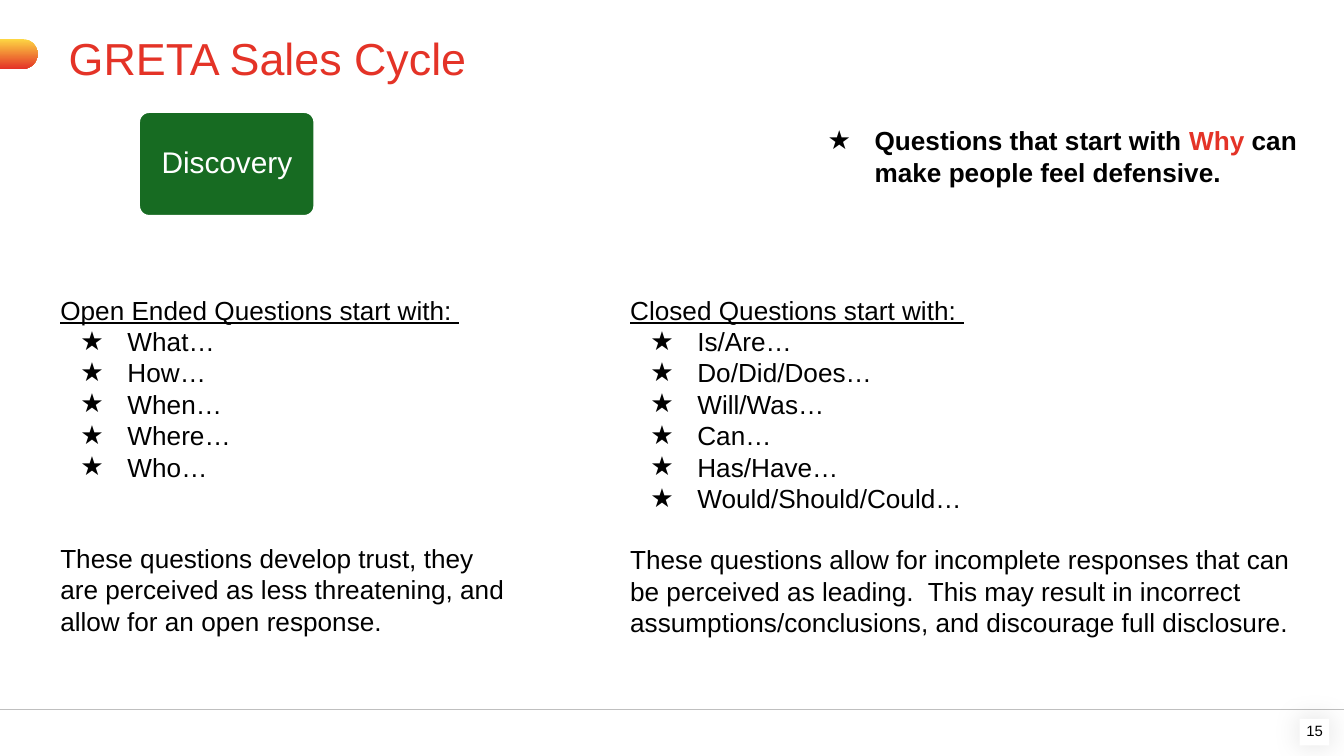
from dataclasses import dataclass

from lxml.etree import SubElement
from pptx import Presentation
from pptx.dml.color import RGBColor
from pptx.enum.shapes import MSO_CONNECTOR, MSO_SHAPE
from pptx.enum.text import MSO_ANCHOR, PP_ALIGN
from pptx.oxml.ns import qn
from pptx.util import Cm, Pt

WHITE = RGBColor(0xFF, 0xFF, 0xFF)
BLACK = RGBColor(0x00, 0x00, 0x00)
GREY = RGBColor(0xBF, 0xBF, 0xBF)
RED = RGBColor(0xE4, 0x33, 0x27)
YELLOW = RGBColor(0xFD, 0xD6, 0x43)
GREEN = RGBColor(0x17, 0x6B, 0x22)

FONT = "Arial"
BODY_SIZE = 14
LINE_PITCH = 16.1  # points per body line
PAGE_WIDTH, PAGE_HEIGHT = 25.4, 14.29
COLUMN_TOP, COLUMN_HEIGHT = 5.31, 1.3
BODY_INSET = 0.25


@dataclass
class Area:
    left: float
    top: float
    width: float
    height: float

    def lengths(self) -> tuple:
        return Cm(self.left), Cm(self.top), Cm(self.width), Cm(self.height)


@dataclass
class QuestionColumn:
    left: float
    width: float
    heading: str
    starters: list[str]
    gap_lines: int
    remark: str


COLUMNS = [
    QuestionColumn(
        0.89, 8.99, "Open Ended Questions start with: ",
        ["What…", "How…", "When…", "Where…", "Who…"], 2,
        "These questions develop trust, they are perceived as less threatening, "
        "and allow for an open response."),
    QuestionColumn(
        11.66, 13.28, "Closed Questions start with: ",
        ["Is/Are…", "Do/Did/Does…", "Will/Was…", "Can…", "Has/Have…",
         "Would/Should/Could…"], 1,
        "These questions allow for incomplete responses that can be perceived as "
        "leading.  This may result in incorrect assumptions/conclusions, and "
        "discourage full disclosure."),
]


def add_box(page, area: Area, inset_x: float, inset_y: float):
    """Add a wrapping text box and return its text frame."""
    frame = page.shapes.add_textbox(*area.lengths()).text_frame
    frame.word_wrap = True
    frame.margin_left = frame.margin_right = Cm(inset_x)
    frame.margin_top = frame.margin_bottom = Cm(inset_y)
    return frame


def add_span(para, text: str, size: float = BODY_SIZE, color: RGBColor = BLACK,
             bold: bool = False, underline: bool = False) -> None:
    span = para.add_run()
    span.text = text
    font = span.font
    font.name, font.size, font.bold, font.underline = FONT, Pt(size), bold, underline
    font.color.rgb = color


def add_star(para) -> None:
    """Give a paragraph a hanging black star bullet."""
    properties = para._p.get_or_add_pPr()
    properties.set("marL", str(Cm(1.27)))
    properties.set("indent", str(-Cm(0.89)))
    color = SubElement(properties, qn("a:buClr"))
    SubElement(color, qn("a:srgbClr"), val=str(BLACK))
    SubElement(properties, qn("a:buFont"), typeface=FONT)
    SubElement(properties, qn("a:buChar"), char="★")


def add_panel(page, kind: MSO_SHAPE, area: Area):
    """Add a preset shape without line or shadow."""
    panel = page.shapes.add_shape(kind, *area.lengths())
    panel.shadow.inherit = False
    panel.line.fill.background()
    return panel


def add_glow_shadow(panel) -> None:
    effects = panel._element.spPr.find(qn("a:effectLst"))
    shadow = SubElement(effects, qn("a:outerShdw"), blurRad=str(Pt(15)), dist="0")
    color = SubElement(shadow, qn("a:srgbClr"), val=str(BLACK))
    SubElement(color, qn("a:alpha"), val="13000")


def draw_footer(page) -> None:
    rule = page.shapes.add_connector(
        MSO_CONNECTOR.STRAIGHT, 0, Cm(13.41), Cm(PAGE_WIDTH), Cm(13.41))
    rule.line.color.rgb = GREY
    rule.line.width = Pt(1)
    SubElement(rule._element.spPr, qn("a:effectLst"))

    plate = add_panel(page, MSO_SHAPE.RECTANGLE, Area(24.56, 13.59, 0.56, 0.5))
    plate.fill.solid()
    plate.fill.fore_color.rgb = WHITE
    add_glow_shadow(plate)
    para = add_box(page, Area(24.31, 13.54, 1.07, 0.5), 0.18, 0.1).paragraphs[0]
    para.alignment = PP_ALIGN.CENTER
    add_span(para, "15", 8)


def draw_title(page) -> None:
    frame = add_box(page, Area(1.12, 0.48, 23.34, 1.22), 0.18, 0.1)
    add_span(frame.paragraphs[0], "GRETA Sales Cycle", 24, RED)

    tab = add_panel(page, MSO_SHAPE.ROUNDED_RECTANGLE, Area(-0.51, 0.74, 1.22, 0.56))
    tab.adjustments[0] = 0.5
    tab.fill.gradient()
    tab.fill.gradient_angle = 270
    for stop, color in zip(tab.fill.gradient_stops, (YELLOW, RED)):
        stop.color.rgb = color


def draw_stage(page) -> None:
    card = add_panel(page, MSO_SHAPE.ROUNDED_RECTANGLE, Area(2.62, 2.11, 3.33, 1.98))
    card.adjustments[0] = 0.1
    card.fill.solid()
    card.fill.fore_color.rgb = GREEN
    card.line.color.rgb = WHITE
    card.line.width = Pt(1.5)
    frame = add_box(page, Area(2.69, 2.16, 3.2, 1.88), 0.18, 0.18)
    frame.vertical_anchor = MSO_ANCHOR.MIDDLE
    para = frame.paragraphs[0]
    para.alignment = PP_ALIGN.CENTER
    para.line_spacing = 0.9
    add_span(para, "Discovery", 16, WHITE)


def draw_warning(page) -> None:
    frame = add_box(page, Area(15.01, 2.11, 9.93, 1.3), BODY_INSET, BODY_INSET)
    para = frame.paragraphs[0]
    add_star(para)
    for text, color in (("Questions that start with ", BLACK), ("Why", RED),
                        (" can make people feel defensive.", BLACK)):
        add_span(para, text, color=color, bold=True)


def draw_column(page, column: QuestionColumn) -> None:
    area = Area(column.left, COLUMN_TOP, column.width, COLUMN_HEIGHT)
    frame = add_box(page, area, BODY_INSET, BODY_INSET)
    add_span(frame.paragraphs[0], column.heading, underline=True)
    for starter in column.starters:
        para = frame.add_paragraph()
        add_star(para)
        add_span(para, starter)
    para = frame.add_paragraph()
    para.space_before = Pt(column.gap_lines * LINE_PITCH)
    add_span(para, column.remark)


def main() -> None:
    deck = Presentation()
    deck.slide_width, deck.slide_height = Cm(PAGE_WIDTH), Cm(PAGE_HEIGHT)
    page = deck.slides.add_slide(deck.slide_layouts[6])
    draw_footer(page)
    draw_title(page)
    draw_warning(page)
    draw_stage(page)
    for column in COLUMNS:
        draw_column(page, column)
    deck.save("out.pptx")


if __name__ == "__main__":
    main()
